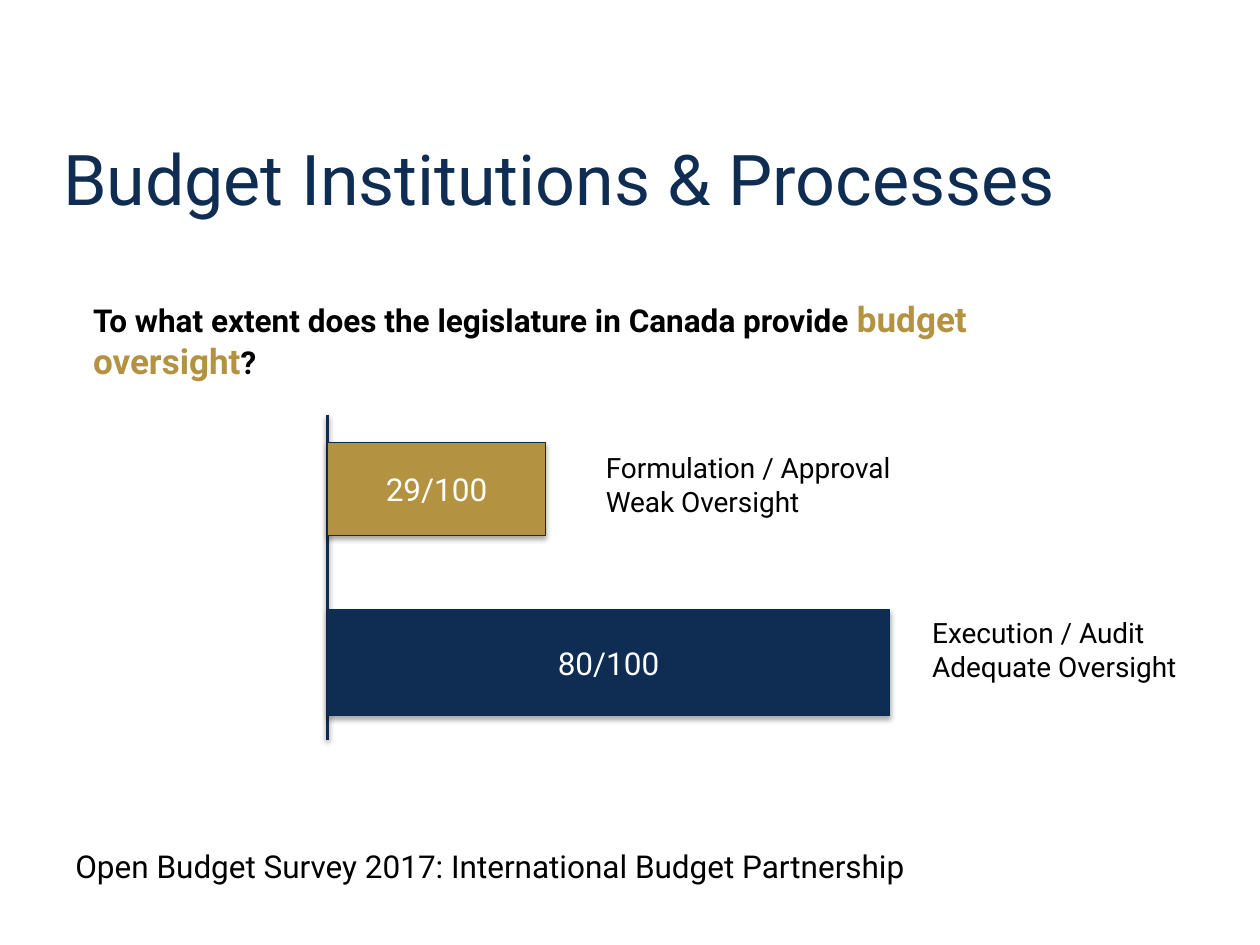
from dataclasses import dataclass

from lxml import etree
from pptx import Presentation, util as u
from pptx.dml.color import RGBColor
from pptx.enum import shapes, text
from pptx.oxml.ns import qn


@dataclass(frozen=True)
class Theme:
    font: str = "Roboto"
    navy: str = "0F2C52"
    outline: str = "0D2B52"
    gold: str = "B39242"
    black: str = "000000"
    white: str = "FFFFFF"
    title_size: int = 40
    accent_size: int = 20
    body_size: int = 18
    label_size: int = 16


class SlideBuilder:
    def __init__(self, slide, theme):
        self.slide = slide
        self.theme = theme

    def style(self, font, size, color, bold=None):
        font.name = self.theme.font
        font.size = u.Pt(size)
        font.color.rgb = RGBColor.from_string(color)
        font.bold = bold

    def place(self, shape, left, top, width, height):
        shape.left, shape.top = u.Inches(left), u.Inches(top)
        shape.width, shape.height = u.Inches(width), u.Inches(height)

    def shadow(self, shape, distance, opacity):
        """Cast a soft shadow straight down; call after the line is set."""
        properties = shape._element.spPr
        effects = properties.find(qn("a:effectLst"))
        if effects is None:
            effects = etree.SubElement(properties, qn("a:effectLst"))
        outer = etree.SubElement(
            effects, qn("a:outerShdw"), blurRad=str(u.Pt(3.1)),
            dist=str(u.Pt(distance)), dir="5400000", rotWithShape="0")
        color = etree.SubElement(outer, qn("a:srgbClr"), val=self.theme.black)
        etree.SubElement(color, qn("a:alpha"), val=str(opacity * 1000))

    def title(self, words, left, top, width, height):
        title = self.slide.shapes.title
        self.place(title, left, top, width, height)
        frame = title.text_frame
        frame.text = words
        frame.word_wrap = True
        frame.auto_size = text.MSO_AUTO_SIZE.NONE
        frame.vertical_anchor = text.MSO_ANCHOR.BOTTOM
        frame.margin_left = frame.margin_right = 0
        para = frame.paragraphs[0]
        para.alignment = text.PP_ALIGN.LEFT
        self.style(para.font, self.theme.title_size, self.theme.navy)

    def text_box(self, lines, left, top, width, height, size, wrap=True):
        box = self.slide.shapes.add_textbox(0, 0, 0, 0)
        self.place(box, left, top, width, height)
        frame = box.text_frame
        frame.word_wrap = wrap
        frame.auto_size = text.MSO_AUTO_SIZE.SHAPE_TO_FIT_TEXT
        frame.text = "\n".join(lines)
        for para in frame.paragraphs:
            self.style(para.font, size, self.theme.black)
        return box

    def question(self, spans, left, top, width, height):
        """Bold text box built from (words, size, color) spans."""
        box = self.text_box([], left, top, width, height, self.theme.body_size)
        para = box.text_frame.paragraphs[0]
        for words, size, color in spans:
            span = para.add_run()
            span.text = words
            self.style(span.font, size, color, bold=True)

    def axis(self, x, top, bottom):
        line = self.slide.shapes.add_connector(
            shapes.MSO_CONNECTOR.STRAIGHT,
            u.Inches(x), u.Inches(top), u.Inches(x), u.Inches(bottom))
        line.line.color.rgb = RGBColor.from_string(self.theme.navy)
        line.line.width = u.Pt(2)
        self.shadow(line, 1.6, 38)

    def bar(self, words, left, top, width, height, color):
        bar = self.slide.shapes.add_shape(
            shapes.MSO_SHAPE.RECTANGLE, 0, 0, 0, 0)
        self.place(bar, left, top, width, height)
        bar.fill.solid()
        bar.fill.fore_color.rgb = RGBColor.from_string(color)
        bar.line.color.rgb = RGBColor.from_string(self.theme.outline)
        bar.line.width = u.Pt(0.75)
        bar.shadow.inherit = False
        self.shadow(bar, 1.8, 35)
        frame = bar.text_frame
        frame.text = words
        frame.vertical_anchor = text.MSO_ANCHOR.MIDDLE
        para = frame.paragraphs[0]
        para.alignment = text.PP_ALIGN.CENTER
        self.style(para.font, self.theme.body_size, self.theme.white)


def main():
    theme = Theme()
    deck = Presentation()
    deck.slide_width, deck.slide_height = u.Inches(10), u.Inches(7.5)
    page = SlideBuilder(deck.slides.add_slide(deck.slide_layouts[5]), theme)

    page.title("Budget Institutions & Processes", 0.5, 0.83, 9, 0.96)
    page.question([
        ("To what extent does the legislature in Canada provide ",
         theme.body_size, theme.black),
        ("budget oversight", theme.accent_size, theme.gold),
        ("?", theme.body_size, theme.black),
    ], 0.64, 2.31, 8.04, 0.77)
    page.text_box(["Open Budget Survey 2017: International Budget Partnership"],
                  0.5, 6.67, 9, 0.4, theme.body_size)

    axis_x = 2.6
    page.axis(axis_x, 3.29, 5.87)
    page.bar("29/100", axis_x, 3.51, 1.73, 0.74, theme.gold)
    page.bar("80/100", axis_x, 4.84, 4.46, 0.84, theme.navy)

    page.text_box(["Formulation / Approval", "Weak Oversight"],
                  4.71, 3.53, 2.53, 0.64, theme.label_size, wrap=False)
    page.text_box(["Execution / Audit", "Adequate Oversight"],
                  7.3, 4.84, 2.21, 0.64, theme.label_size, wrap=False)
    deck.save("out.pptx")


if __name__ == "__main__":
    main()
